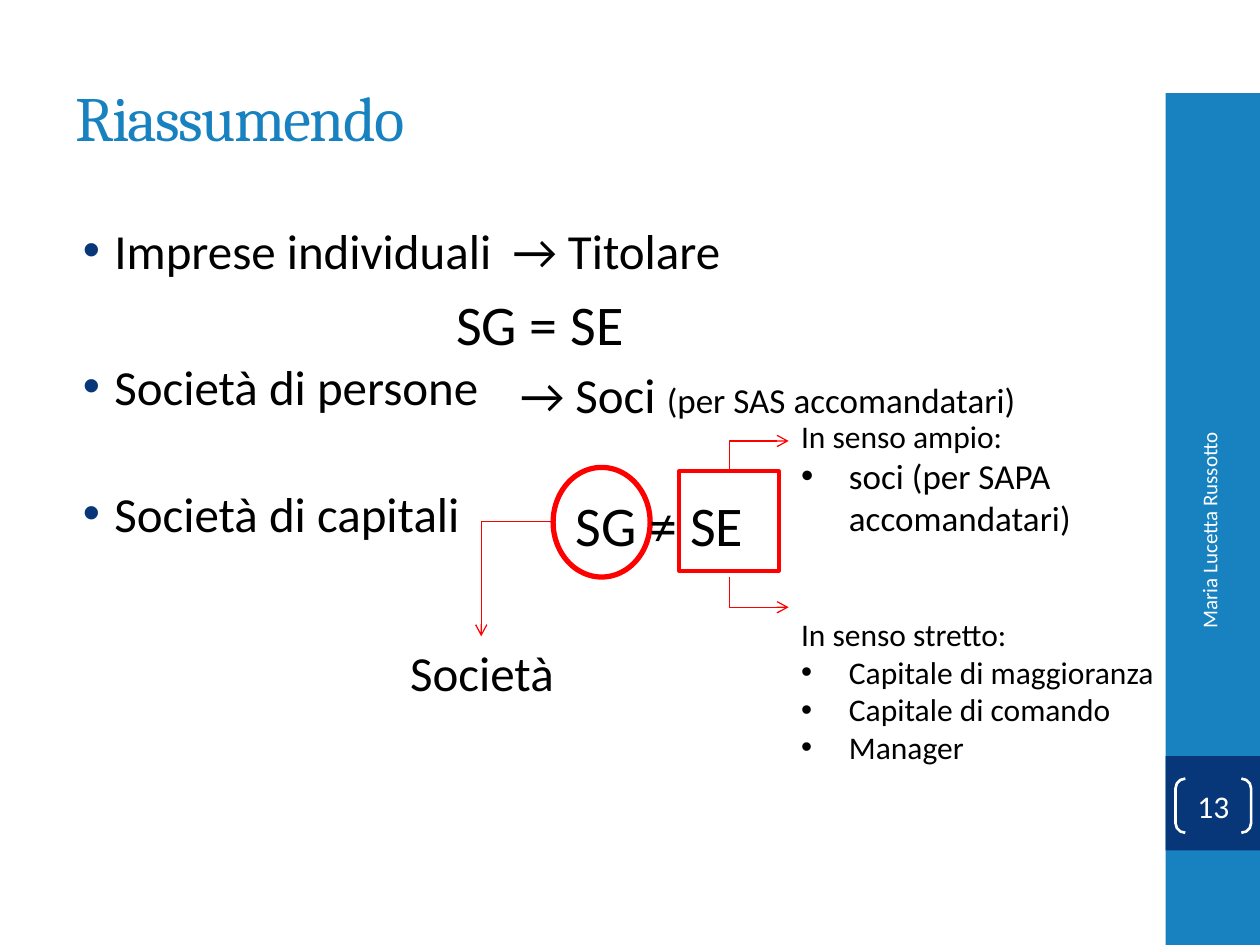
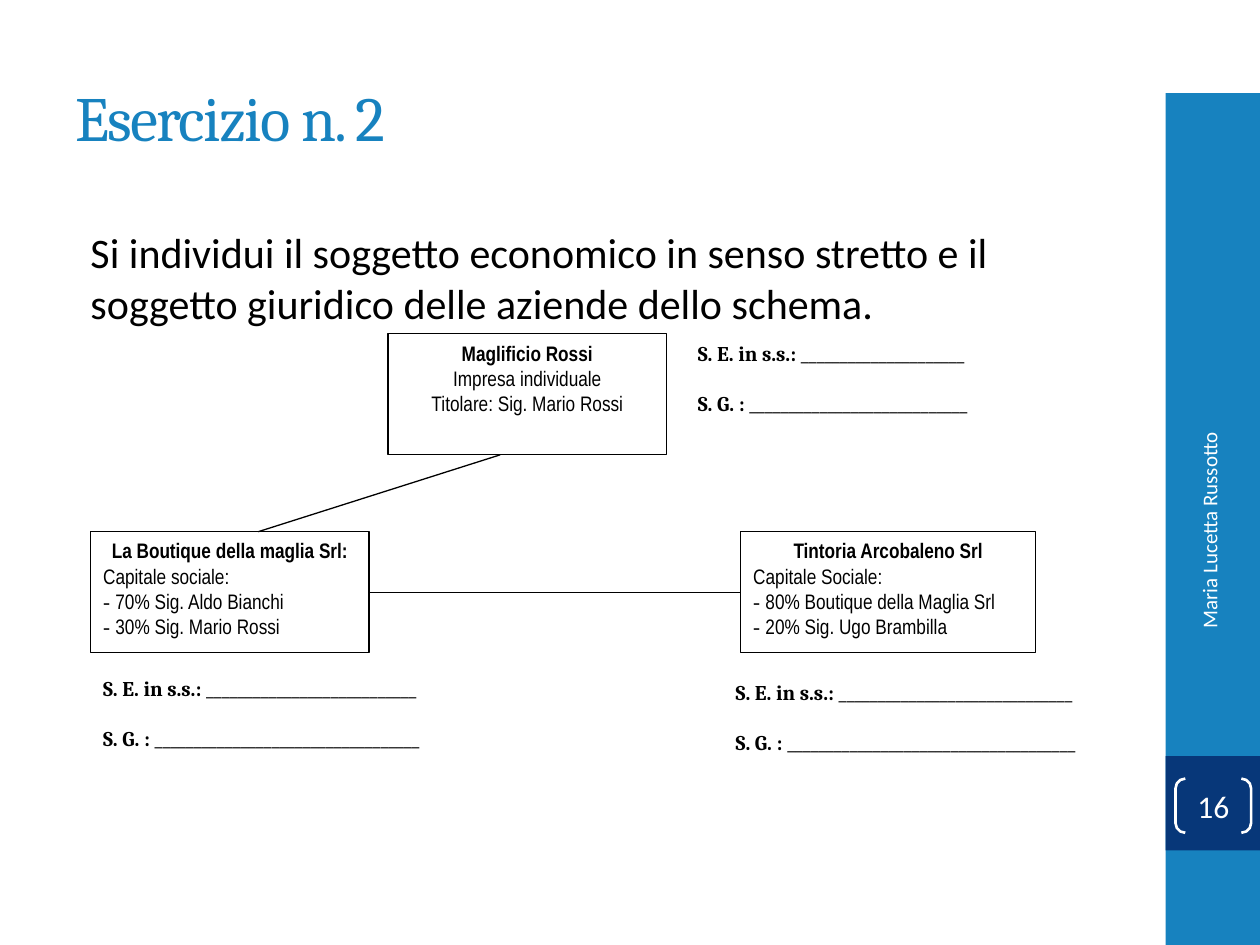
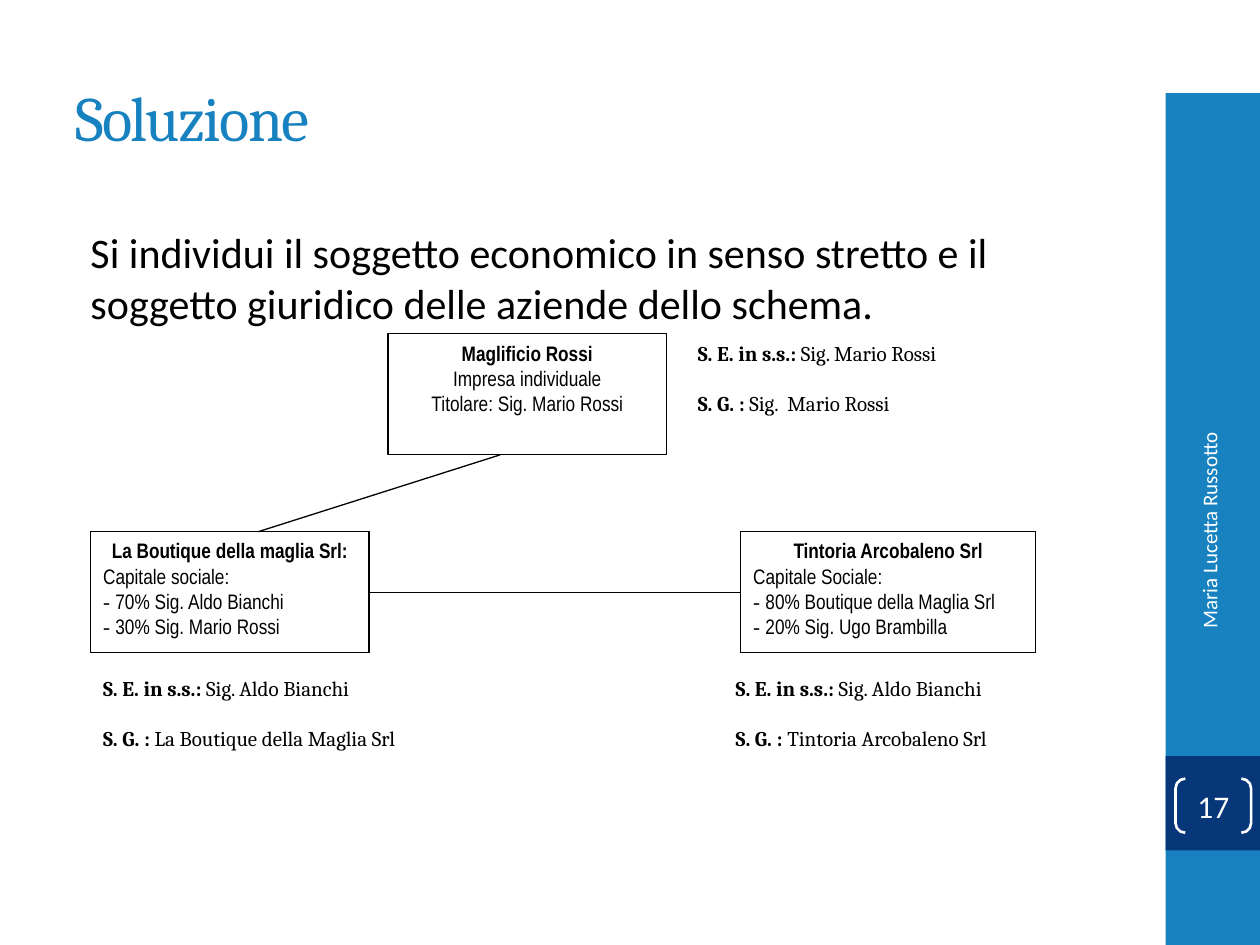
from dataclasses import dataclass, replace

from lxml import etree
from pptx import Presentation
from pptx.dml.color import RGBColor
from pptx.enum.shapes import MSO_CONNECTOR, MSO_SHAPE
from pptx.enum.text import MSO_ANCHOR, PP_ALIGN
from pptx.oxml.ns import qn
from pptx.util import Inches, Pt

STRAIGHT = MSO_CONNECTOR.STRAIGHT
ELBOW = MSO_CONNECTOR.ELBOW
RECT = MSO_SHAPE.RECTANGLE
OVAL = MSO_SHAPE.OVAL
BRACKETS = MSO_SHAPE.DOUBLE_BRACKET
LEFT, CENTER = PP_ALIGN.LEFT, PP_ALIGN.CENTER
RIGHT, JUSTIFY = PP_ALIGN.RIGHT, PP_ALIGN.JUSTIFY
TOP, MIDDLE = MSO_ANCHOR.TOP, MSO_ANCHOR.MIDDLE

COLORS = {
    "blue": "1782BF",
    "navy": "073779",
    "red": "FF0000",
    "black": "000000",
    "white": "FFFFFF",
}
AUTHOR = "Maria Lucetta Russotto"


@dataclass(frozen=True)
class Style:
    size: int
    font: str = "Calibri"
    color: str = "black"
    bold: bool = False
    tracking: int = 0


@dataclass
class Para:
    runs: list
    align: PP_ALIGN = LEFT
    before: float = 0
    indent: float = 0
    hanging: float = 0
    bullet: str = ""


TITLE = Style(36, "Cambria", "blue", tracking=-100)
LARGE = Style(32)
BODY = Style(28)
TASK = Style(24)
DETAIL = Style(20)
NOTE = Style(18)
NUMBER = Style(18, color="white")
FOOTER = Style(12, color="white")
COMPANY = Style(12, "Arial Narrow")
DASH = Style(12, "Times New Roman")
ANSWER = Style(12, "Cambria")


def bold(style):
    return replace(style, bold=True)


def line(text, style, **layout):
    return Para([(text, style)], **layout)


class Deck:
    def __init__(self):
        self.prs = Presentation()
        self.prs.slide_width = Inches(10)
        self.prs.slide_height = Inches(7.5)
        self.slide = None

    def rgb(self, name):
        return RGBColor.from_string(COLORS[name])

    def new_slide(self, title, number):
        self.slide = self.prs.slides.add_slide(self.prs.slide_layouts[6])
        self.shape(RECT, (9.25, 0.74, 0.75, 6.76), fill="blue")
        self.shape(RECT, (9.25, 6, 0.75, 0.75), fill="navy")
        self.text((0.5, 0.3, 8.33, 1.25), [line(title, TITLE)], MIDDLE)
        badge = self.shape(BRACKETS, (9.33, 6.18, 0.6, 0.43), outline="white", weight=1.5)
        badge.adjustments[0] = 0.18
        self.fill_text(badge, [line(str(number), NUMBER, align=CENTER)], MIDDLE, inset=0)
        footer = self.text((8.3, 4.43, 2.59, 0.4), [line(AUTHOR, FOOTER, align=RIGHT)], MIDDLE)
        footer.rotation = 270

    def shape(self, kind, box, fill=None, outline=None, weight=0.75):
        shape = self.slide.shapes.add_shape(kind, *map(Inches, box))
        shape.shadow.inherit = False
        if fill:
            shape.fill.solid()
            shape.fill.fore_color.rgb = self.rgb(fill)
        else:
            shape.fill.background()
        if outline:
            shape.line.color.rgb = self.rgb(outline)
            shape.line.width = Pt(weight)
        else:
            shape.line.fill.background()
        return shape

    def text(self, box, paragraphs, anchor=TOP):
        return self.fill_text(self.slide.shapes.add_textbox(*map(Inches, box)), paragraphs, anchor)

    def fill_text(self, shape, paragraphs, anchor=TOP, inset=None):
        frame = shape.text_frame
        frame.word_wrap = True
        frame.vertical_anchor = anchor
        if inset is not None:
            frame.margin_left = frame.margin_right = Inches(inset)
            frame.margin_top = frame.margin_bottom = Inches(inset)
        for index, para in enumerate(paragraphs):
            paragraph = frame.add_paragraph() if index else frame.paragraphs[0]
            self.format_paragraph(paragraph, para)
            for content, style in para.runs:
                self.add_run(paragraph, content, style)
        return shape

    def format_paragraph(self, paragraph, para):
        props = paragraph._p.get_or_add_pPr()
        props.set("marL", str(Inches(para.indent)))
        props.set("indent", str(Inches(-para.hanging)))
        if para.bullet:
            color = etree.SubElement(props, qn("a:buClr"))
            etree.SubElement(color, qn("a:srgbClr"), val=COLORS[para.bullet])
            etree.SubElement(props, qn("a:buFont"), typeface="Arial")
            etree.SubElement(props, qn("a:buChar"), char="•")
        paragraph.alignment = para.align
        if para.before:
            paragraph.space_before = Pt(para.before)

    def add_run(self, paragraph, content, style):
        run = paragraph.add_run()
        run.text = content
        run.font.size = Pt(style.size)
        run.font.name = style.font
        run.font.bold = style.bold
        run.font.color.rgb = self.rgb(style.color)
        if style.tracking:
            run._r.get_or_add_rPr().set("spc", str(style.tracking))

    def connect(self, start, end, color="black", kind=STRAIGHT, arrow=None):
        link = self.slide.shapes.add_connector(kind, *map(Inches, start + end))
        link.line.color.rgb = self.rgb(color)
        link.line.width = Pt(0.75)
        props = link._element.spPr
        etree.SubElement(props, qn("a:effectLst"))
        if kind == ELBOW:
            props.find(qn("a:prstGeom")).set("prst", "bentConnector2")
        if arrow:
            etree.SubElement(props.find(qn("a:ln")), qn(f"a:{arrow}"), type="arrow")

    def answers(self, left, top, economic, legal):
        rows = [("S. E. in s.s.: ", economic, 0), ("S. G. : ", legal, 14.4)]
        self.text((left, top, 3.1, 1.08), [
            Para([(label, bold(ANSWER)), (value, ANSWER)], before=before)
            for label, value, before in rows
        ])

    def company(self, box, name, details, shares=()):
        align = JUSTIFY if shares else CENTER
        paragraphs = [line(name, bold(COMPANY), align=CENTER)]
        paragraphs += [line(detail, COMPANY, align=align) for detail in details]
        paragraphs += [Para([("- ", DASH), (share, COMPANY)]) for share in shares]
        self.fill_text(self.shape(RECT, box, outline="black"), paragraphs)


def summary(deck):
    deck.new_slide("Riassumendo", 13)
    forms = [("Imprese individuali", 0), ("Società di persone", 44), ("Società di capitali", 39)]
    deck.text((0.43, 1.7, 8.5, 5.28), [
        line(form, BODY, before=before, indent=0.38, hanging=0.25, bullet="navy")
        for form, before in forms
    ])
    deck.shape(OVAL, (4.39, 3.71, 0.77, 0.87), outline="red", weight=3)
    deck.shape(RECT, (5.39, 3.74, 0.79, 0.79), outline="red", weight=2.25)
    deck.connect((4.39, 4.14), (3.82, 5.05), "red", ELBOW, "tailEnd")
    deck.connect((6.26, 3.5), (5.79, 3.74), "red", ELBOW, "headEnd")
    deck.connect((6.26, 4.82), (5.79, 4.58), "red", ELBOW, "headEnd")

    senses = [
        (3.26, 0.84, "In senso ampio:", DETAIL, ["soci (per SAPA accomandatari)"]),
        (4.83, 1.72, "In senso stretto:", NOTE,
         ["Capitale di maggioranza", "Capitale di comando", "Manager"]),
    ]
    for top, height, heading, style, subjects in senses:
        deck.text((6.26, top, 3.74, height), [line(heading, NOTE)] + [
            line(subject, style, indent=0.38, hanging=0.38, bullet="black")
            for subject in subjects
        ])

    deck.text((2.78, 5.05, 2.09, 0.57), [line("Società", BODY, align=CENTER)])
    deck.text((3.26, 2.25, 2.05, 0.64), [line("SG = SE", LARGE, align=CENTER)])
    deck.text((4.21, 3.84, 2.05, 0.64), [line("SG ≠ SE", LARGE, align=CENTER)])
    deck.text((3.97, 1.7, 2.44, 0.57), [line("→ Titolare", BODY)])
    deck.text((4.03, 2.84, 4.17, 0.57),
              [Para([("→ Soci ", BODY), ("(per SAS accomandatari)", DETAIL)])])


def exercise(deck, title, number, answers):
    deck.new_slide(title, number)
    deck.text((0.5, 1.75, 8.33, 5.25), [line(
        "Si individui il soggetto economico in senso stretto e il "
        "soggetto giuridico delle aziende dello schema.", TASK, indent=0.12)])
    deck.company((3.08, 2.65, 2.21, 0.96), "Maglificio Rossi",
                 ["Impresa individuale", "Titolare: Sig. Mario Rossi"])
    deck.company((0.72, 4.22, 2.21, 0.96), "La Boutique della maglia Srl:",
                 ["Capitale sociale:"], ["70% Sig. Aldo Bianchi", "30% Sig. Mario Rossi"])
    deck.company((5.88, 4.22, 2.34, 0.96), "Tintoria Arcobaleno Srl",
                 ["Capitale Sociale:"], ["80% Boutique della Maglia Srl", "20% Sig. Ugo Brambilla"])
    deck.connect((3.97, 3.61), (2.05, 4.22))
    deck.connect((2.93, 4.7), (5.88, 4.7))
    for answer in answers:
        deck.answers(*answer)


def main():
    deck = Deck()
    summary(deck)
    exercise(deck, "Esercizio n. 2", 16, [
        (5.44, 2.65, "_" * 21, "_" * 28),
        (5.74, 5.34, "_" * 30, "_" * 37),
        (0.72, 5.31, "_" * 27, "_" * 34),
    ])
    exercise(deck, "Soluzione", 17, [
        (5.44, 2.65, "Sig. Mario Rossi", "Sig.  Mario Rossi"),
        (5.74, 5.31, "Sig. Aldo Bianchi", "Tintoria Arcobaleno Srl"),
        (0.72, 5.31, "Sig. Aldo Bianchi", "La Boutique della Maglia Srl"),
    ])
    deck.prs.save("out.pptx")


if __name__ == "__main__":
    main()
